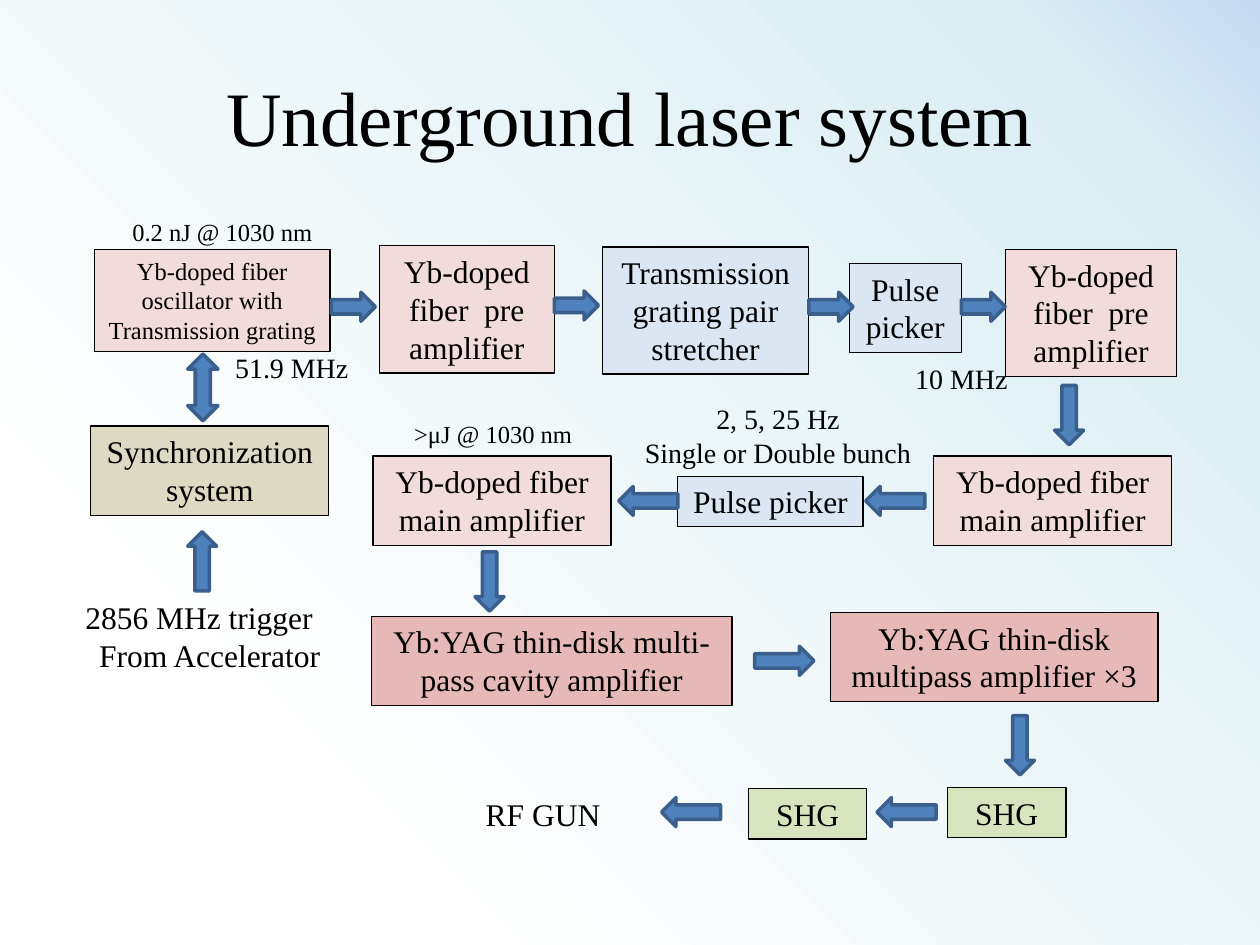
import copy

import pptx
import pptx.dml.color
import pptx.enum.shapes
import pptx.enum.text
import pptx.oxml.ns
import pptx.util

Inches = pptx.util.Inches
Pt = pptx.util.Pt
RGBColor = pptx.dml.color.RGBColor
MSO_SHAPE = pptx.enum.shapes.MSO_SHAPE
PP_ALIGN = pptx.enum.text.PP_ALIGN
MSO_ANCHOR = pptx.enum.text.MSO_ANCHOR
MSO_AUTO_SIZE = pptx.enum.text.MSO_AUTO_SIZE

FONT = "Times New Roman"
BLACK = RGBColor(0x00, 0x00, 0x00)
FIBER_PINK = RGBColor(0xF2, 0xDC, 0xDB)
OPTICS_BLUE = RGBColor(0xDC, 0xE6, 0xF2)
DISK_RED = RGBColor(0xE6, 0xB9, 0xB8)
SHG_GREEN = RGBColor(0xD7, 0xE4, 0xBD)
SYNC_TAN = RGBColor(0xDD, 0xD9, 0xC3)
ARROW_FILL = RGBColor(0x4F, 0x81, 0xBD)
ARROW_LINE = RGBColor(0x3A, 0x5F, 0x8C)
BACKGROUND_STOPS = [
    (0, RGBColor(0xC6, 0xD9, 0xF1)),
    (0.12, RGBColor(0xDB, 0xEE, 0xF4)),
    (0.8, RGBColor(0xFF, 0xFF, 0xFF)),
]

RIGHT, DOWN, LEFT, UP = 0, 90, 180, 270
LONG, SHORT = 0.47, 0.35
ARROW_HEIGHT = 0.23

# text, left, top, width, height, fill, text size
STAGES = [
    ("Yb-doped fiber oscillator with Transmission grating",
     0.75, 1.98, 1.87, 0.81, FIBER_PINK, 14),
    ("Yb-doped fiber  pre amplifier", 3.01, 1.95, 1.39, 1.01, FIBER_PINK, 18),
    ("Transmission grating pair stretcher",
     4.78, 1.96, 1.64, 1.01, OPTICS_BLUE, 18),
    ("Pulse picker", 6.74, 2.09, 0.89, 0.71, OPTICS_BLUE, 18),
    ("Yb-doped fiber  pre amplifier", 7.98, 1.98, 1.36, 1.01, FIBER_PINK, 18),
    ("Yb-doped fiber main amplifier", 7.41, 3.62, 1.89, 0.71, FIBER_PINK, 18),
    ("Pulse picker", 5.38, 3.78, 1.47, 0.4, OPTICS_BLUE, 18),
    ("Yb-doped fiber main amplifier", 2.96, 3.62, 1.89, 0.71, FIBER_PINK, 18),
    ("Yb:YAG thin-disk multi-pass cavity amplifier",
     2.95, 4.89, 2.86, 0.71, DISK_RED, 18),
    ("Yb:YAG thin-disk multipass amplifier ×3",
     6.59, 4.86, 2.6, 0.71, DISK_RED, 18),
    ("SHG", 7.52, 6.25, 0.94, 0.4, SHG_GREEN, 18),
    ("SHG", 5.94, 6.26, 0.94, 0.4, SHG_GREEN, 18),
    ("Synchronization system", 0.72, 3.38, 1.89, 0.71, SYNC_TAN, 18),
]

# left, top, length (before rotation), direction
ARROWS = [
    (2.63, 2.32, SHORT, RIGHT),
    (4.4, 2.31, SHORT, RIGHT),
    (6.42, 2.32, SHORT, RIGHT),
    (7.63, 2.32, SHORT, RIGHT),
    (8.25, 3.18, LONG, DOWN),
    (6.87, 3.86, LONG, LEFT),
    (4.91, 3.86, LONG, LEFT),
    (3.65, 4.5, LONG, DOWN),
    (5.99, 5.13, LONG, RIGHT),
    (7.86, 5.8, LONG, DOWN),
    (6.96, 6.33, LONG, LEFT),
    (5.25, 6.33, LONG, LEFT),
    (1.37, 4.34, LONG, UP),
]

# text, left, top, width, height, text size
LABELS = [
    ("0.2 nJ @ 1030 nm", 0.86, 1.67, 1.81, 0.34, 14),
    ("51.9 MHz", 1.69, 2.73, 1.25, 0.37, 16),
    ("2, 5, 25 Hz\nSingle or Double bunch", 5.01, 3.14, 2.33, 0.64, 16),
    (">μJ @ 1030 nm", 3.01, 3.28, 1.81, 0.34, 14),
    ("RF GUN", 3.6, 6.26, 1.42, 0.4, 18),
]


def set_background(slide):
    fill = slide.background.fill
    fill.gradient()
    fill.gradient_angle = 225  # counter-clockwise: runs from top right to bottom left
    stop_list = slide.element.find(".//" + pptx.oxml.ns.qn("a:gsLst"))
    stop_list.append(copy.deepcopy(stop_list[-1]))
    for stop, (position, color) in zip(fill.gradient_stops, BACKGROUND_STOPS):
        stop.position = position
        stop.color.rgb = color


def write_text(shape, text, size, anchor=MSO_ANCHOR.TOP,
               auto_size=MSO_AUTO_SIZE.SHAPE_TO_FIT_TEXT, wrap=True):
    frame = shape.text_frame
    frame.text = text
    frame.word_wrap = wrap
    frame.auto_size = auto_size
    frame.vertical_anchor = anchor
    for paragraph in frame.paragraphs:
        paragraph.alignment = PP_ALIGN.CENTER
        for run in paragraph.runs:
            run.font.name = FONT
            run.font.size = Pt(size)
            run.font.color.rgb = BLACK


def add_title(slide, text):
    title = slide.shapes.title
    title.left, title.top = Inches(0.69), Inches(0.4)
    title.width, title.height = Inches(8.62), Inches(1.03)
    write_text(title, text, 44, MSO_ANCHOR.MIDDLE, MSO_AUTO_SIZE.NONE)


def add_filled_shape(slide, preset, box, fill, line, line_width):
    shape = slide.shapes.add_shape(preset, *map(Inches, box))
    shape.shadow.inherit = False
    shape.fill.solid()
    shape.fill.fore_color.rgb = fill
    shape.line.color.rgb = line
    shape.line.width = Pt(line_width)
    return shape


def add_stage(slide, text, left, top, width, height, fill, size):
    stage = add_filled_shape(slide, MSO_SHAPE.RECTANGLE,
                             (left, top, width, height), fill, BLACK, 0.75)
    write_text(stage, text, size)


def add_arrow(slide, preset, box, direction=RIGHT):
    arrow = add_filled_shape(slide, preset, box, ARROW_FILL, ARROW_LINE, 2)
    arrow.rotation = direction


def add_label(slide, text, left, top, width, height, size, wrap=True):
    label = slide.shapes.add_textbox(*map(Inches, (left, top, width, height)))
    write_text(label, text, size, wrap=wrap)
    return label


def main():
    presentation = pptx.Presentation()
    presentation.slide_width = Inches(10)
    presentation.slide_height = Inches(7.5)
    slide = presentation.slides.add_slide(presentation.slide_layouts[5])

    set_background(slide)
    add_title(slide, "Underground laser system")
    for stage in STAGES:
        add_stage(slide, *stage)
    for left, top, length, direction in ARROWS:
        add_arrow(slide, MSO_SHAPE.RIGHT_ARROW,
                  (left, top, length, ARROW_HEIGHT), direction)
    add_arrow(slide, MSO_SHAPE.UP_DOWN_ARROW, (1.49, 2.81, 0.24, 0.53))
    for label in LABELS:
        add_label(slide, *label)
    add_label(slide, "10 MHz", 7.16, 2.82, 0.94, 0.37, 16, wrap=False)
    trigger = add_label(slide, "2856 MHz trigger\nFrom Accelerator",
                        0.58, 4.7, 2.17, 0.71, 18)
    trigger.text_frame.paragraphs[0].alignment = PP_ALIGN.LEFT

    presentation.save("out.pptx")


if __name__ == "__main__":
    main()
